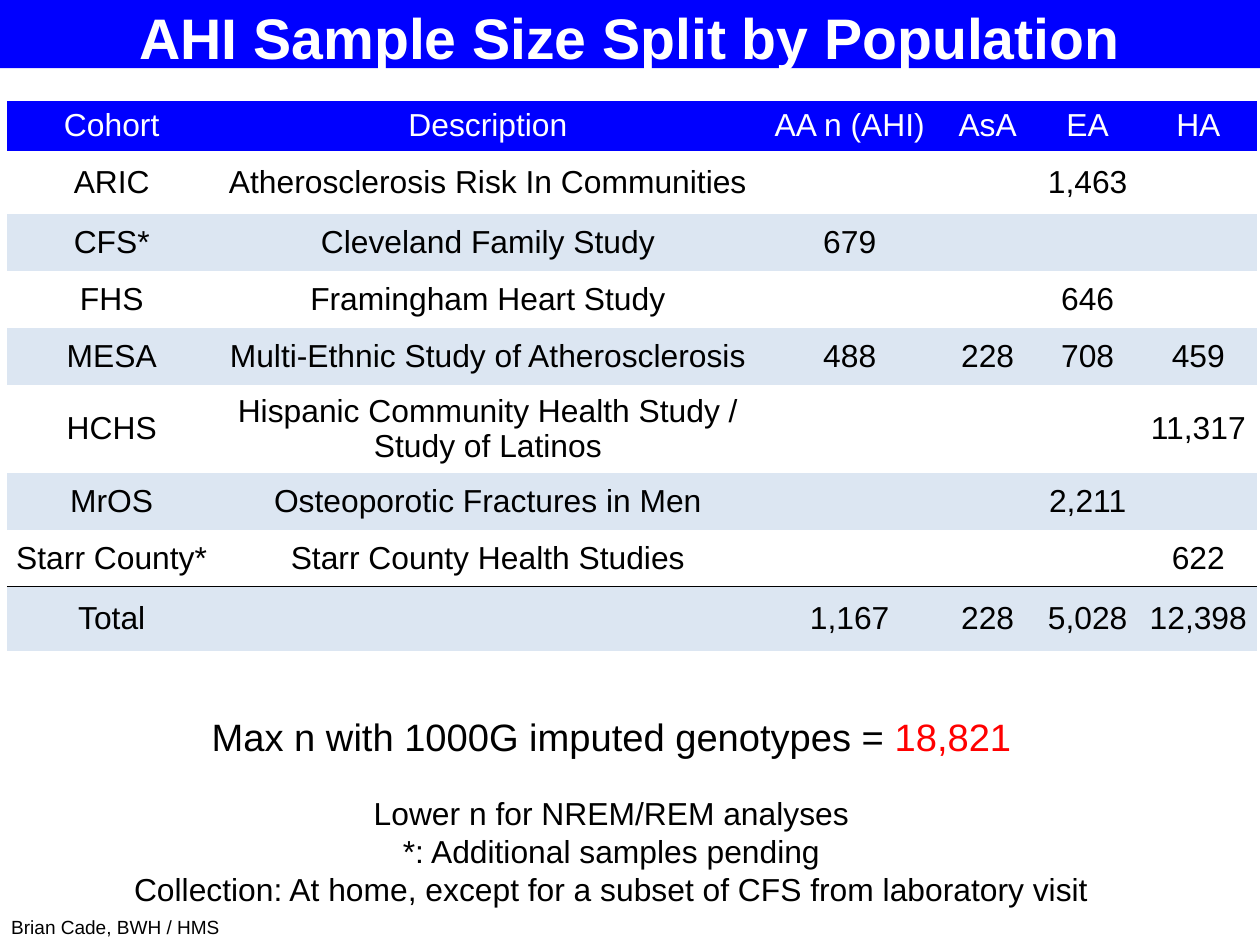
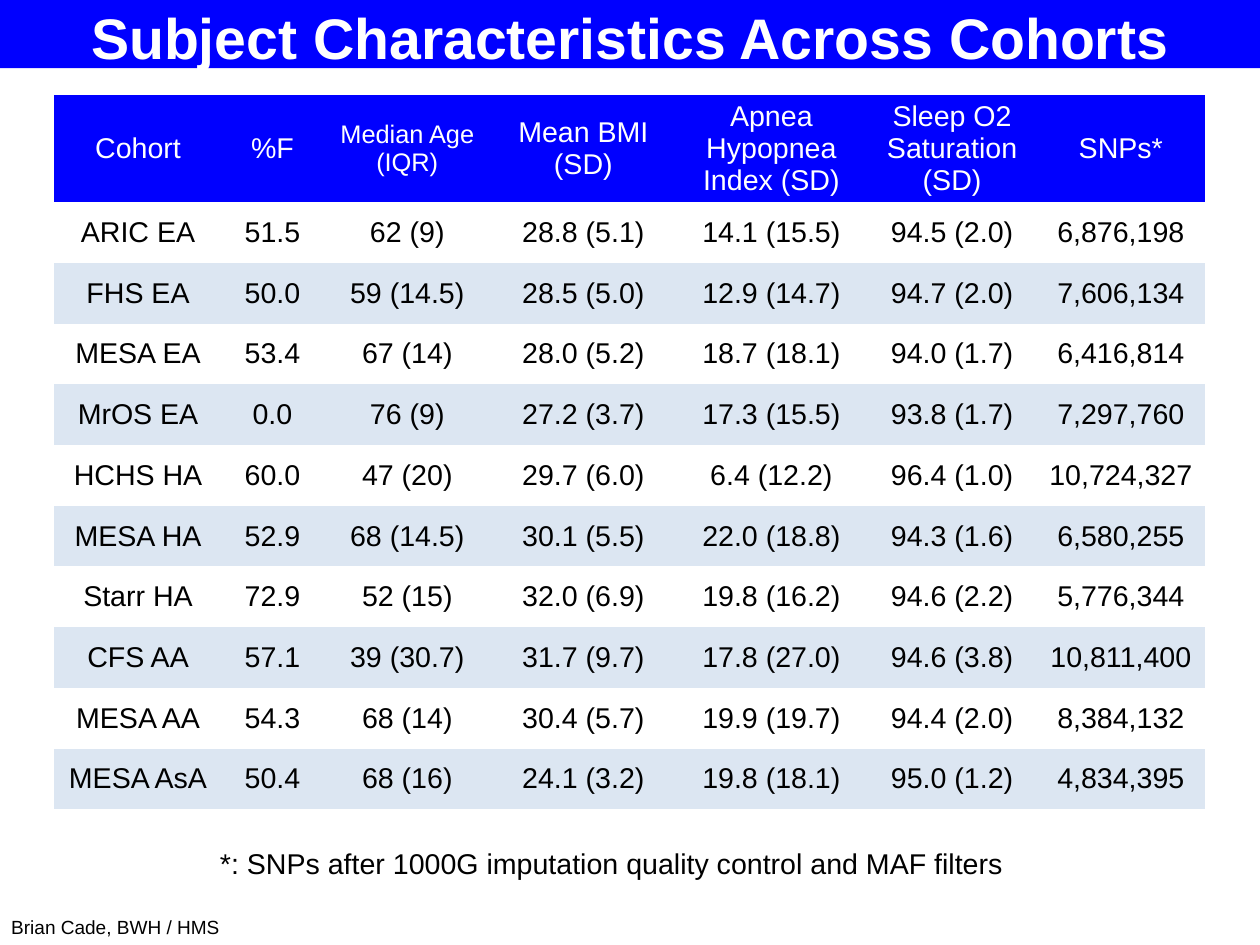
from dataclasses import dataclass

from pptx import Presentation
from pptx.dml.color import RGBColor as RGB
from pptx.enum.shapes import MSO_SHAPE as Shape
from pptx.enum.text import MSO_ANCHOR as Anchor, PP_ALIGN as Align
from pptx.oxml import parse_xml
from pptx.oxml.ns import nsdecls
from pptx.util import Pt


@dataclass(frozen=True)
class Theme:
    font: str = "Arial"
    blue: str = "0000FF"
    band: str = "DCE6F2"
    white: str = "FFFFFF"
    black: str = "000000"
    red: str = "FF0000"
    title: int = 36
    lead: int = 24
    large: int = 20
    body: int = 18
    small: int = 16
    footer: int = 12


T = Theme()
WIDTH, HEIGHT = 793.7, 595.28
NO_STYLE = "{2D5ABB26-0587-4C30-8999-92F81FD0307C}"

POPULATION = [
    ["Cohort", "Description", "AA n (AHI)", "AsA", "EA", "HA"],
    ["ARIC", "Atherosclerosis Risk In Communities", "", "", "1,463", ""],
    ["CFS*", "Cleveland Family Study", "679", "", "", ""],
    ["FHS", "Framingham Heart Study", "", "", "646", ""],
    ["MESA", "Multi-Ethnic Study of Atherosclerosis", "488", "228", "708", "459"],
    ["HCHS", "Hispanic Community Health Study / Study of Latinos", "", "", "", "11,317"],
    ["MrOS", "Osteoporotic Fractures in Men", "", "", "2,211", ""],
    ["Starr County*", "Starr County Health Studies", "", "", "", "622"],
    ["Total", "", "1,167", "228", "5,028", "12,398"],
]

CHARACTERISTICS = [
    ["Cohort", "%F", "Median Age (IQR)", "Mean BMI (SD)", "Apnea Hypopnea Index (SD)",
     "Sleep O2 Saturation (SD)", "SNPs*"],
    ["ARIC EA", "51.5", "62 (9)", "28.8 (5.1)", "14.1 (15.5)", "94.5 (2.0)", "6,876,198"],
    ["FHS EA", "50.0", "59 (14.5)", "28.5 (5.0)", "12.9 (14.7)", "94.7 (2.0)", "7,606,134"],
    ["MESA EA", "53.4", "67 (14)", "28.0 (5.2)", "18.7 (18.1)", "94.0 (1.7)", "6,416,814"],
    ["MrOS EA", "0.0", "76 (9)", "27.2 (3.7)", "17.3 (15.5)", "93.8 (1.7)", "7,297,760"],
    ["HCHS HA", "60.0", "47 (20)", "29.7 (6.0)", "6.4 (12.2)", "96.4 (1.0)", "10,724,327"],
    ["MESA HA", "52.9", "68 (14.5)", "30.1 (5.5)", "22.0 (18.8)", "94.3 (1.6)", "6,580,255"],
    ["Starr HA", "72.9", "52 (15)", "32.0 (6.9)", "19.8 (16.2)", "94.6 (2.2)", "5,776,344"],
    ["CFS AA", "57.1", "39 (30.7)", "31.7 (9.7)", "17.8 (27.0)", "94.6 (3.8)", "10,811,400"],
    ["MESA AA", "54.3", "68 (14)", "30.4 (5.7)", "19.9 (19.7)", "94.4 (2.0)", "8,384,132"],
    ["MESA AsA", "50.4", "68 (16)", "24.1 (3.2)", "19.8 (18.1)", "95.0 (1.2)", "4,834,395"],
]


def style(run, size, color=T.black, bold=False):
    f = run.font
    f.name, f.size, f.bold = T.font, Pt(size), bold
    f.color.rgb = RGB.from_string(color)


def set_margins(obj, left, top, right, bottom):
    obj.margin_left, obj.margin_top = Pt(left), Pt(top)
    obj.margin_right, obj.margin_bottom = Pt(right), Pt(bottom)


def add_title(s, text):
    sp = s.shapes.add_shape(Shape.RECTANGLE, 0, 0, Pt(WIDTH), Pt(43))
    sp.shadow.inherit = False
    sp.fill.solid()
    sp.fill.fore_color.rgb = RGB.from_string(T.blue)
    sp.line.fill.background()
    tf = sp.text_frame
    tf.text = text
    tf.word_wrap = True
    tf.vertical_anchor = Anchor.MIDDLE
    set_margins(tf, 0, 3, 0, 0)
    p = tf.paragraphs[0]
    p.alignment = Align.CENTER
    style(p.runs[0], T.title, T.white, bold=True)


def add_footer(s):
    tf = s.shapes.add_textbox(0, Pt(573), Pt(180), Pt(20)).text_frame
    tf.text = "Brian Cade, BWH / HMS"
    tf.word_wrap = True
    style(tf.paragraphs[0].runs[0], T.footer)


def add_note(s, top, height, lines, size):
    tf = s.shapes.add_textbox(Pt(36), Pt(top), Pt(698.4), Pt(height)).text_frame
    tf.text = "\n".join(lines)
    tf.word_wrap = True
    tf.vertical_anchor = Anchor.MIDDLE
    set_margins(tf, 0, 1.5, 0, 0)
    for p in tf.paragraphs:
        p.alignment = Align.CENTER
        style(p.runs[0], size)
    return tf


def add_border(cell, side):
    cell._tc.get_or_add_tcPr().insert(0, parse_xml(
        f'<a:{side} {nsdecls("a")} w="{Pt(1)}"><a:solidFill>'
        f'<a:srgbClr val="{T.black}"/></a:solidFill></a:{side}>'))


def fill_cell(cell, text, row, size):
    fill = T.blue if row == 0 else T.band if row % 2 == 0 else None
    if fill:
        cell.fill.solid()
        cell.fill.fore_color.rgb = RGB.from_string(fill)
    else:
        cell.fill.background()
    cell.vertical_anchor = Anchor.MIDDLE
    set_margins(cell, 0, 0, 0, 0)
    if text:
        cell.text_frame.text = text
        p = cell.text_frame.paragraphs[0]
        p.alignment = Align.CENTER
        style(p.runs[0], size, T.white if row == 0 else T.black)


def add_grid(s, left, top, widths, heights, data, size):
    table = s.shapes.add_table(len(heights), len(widths), Pt(left), Pt(top),
                               Pt(sum(widths)), Pt(sum(heights))).table
    table.horz_banding = table.first_row = False
    table._tbl.tblPr[0].text = NO_STYLE
    for column, width in zip(table.columns, widths):
        column.width = Pt(width)
    for i, (height, values) in enumerate(zip(heights, data)):
        table.rows[i].height = Pt(height)
        for cell, text in zip(table.rows[i].cells, values):
            fill_cell(cell, text, i, size)
    return table


def new_slide(prs, title):
    s = prs.slides.add_slide(prs.slide_layouts[6])
    add_footer(s)
    add_title(s, title)
    return s


def population_slide(prs):
    s = new_slide(prs, "AHI Sample Size Split by Population")
    table = add_grid(s, 4.4, 63.5, [132, 342, 113.8, 60, 66, 73.5],
                     [31.5, 39.7] + [35.9] * 3 + [55.4] + [35.9] * 2 + [40.3],
                     POPULATION, T.large)
    last = len(POPULATION) - 1
    for row, side in ((last - 1, "lnB"), (last, "lnT")):
        for cell in table.rows[row].cells:
            add_border(cell, side)
    tf = add_note(s, 461, 98, [
        "Max n with 1000G imputed genotypes = ",
        "Lower n for NREM/REM analyses",
        "*: Additional samples pending",
        "Collection: At home, except for a subset of CFS from laboratory visit",
    ], T.large)
    lead, follow = tf.paragraphs[:2]
    style(lead.runs[0], T.lead)
    r = lead.add_run()
    r.text = "18,821"
    style(r, T.lead, T.red)
    follow.space_before = Pt(21.5)


def characteristics_slide(prs):
    s = new_slide(prs, "Subject Characteristics Across Cohorts")
    table = add_grid(s, 34, 60, [106, 63.3, 106.6, 115.2, 121.7, 106, 106.6],
                     [67.4] + [38.25] * 10, CHARACTERISTICS, T.body)
    age = table.cell(0, 2).text_frame.paragraphs[0].runs[0]
    age.font.size = Pt(T.small)
    add_note(s, 532.5, 21,
             ["*: SNPs after 1000G imputation quality control and MAF filters"], T.body)


def main():
    prs = Presentation()
    prs.slide_width, prs.slide_height = Pt(WIDTH), Pt(HEIGHT)
    population_slide(prs)
    characteristics_slide(prs)
    prs.save("out.pptx")


if __name__ == "__main__":
    main()
